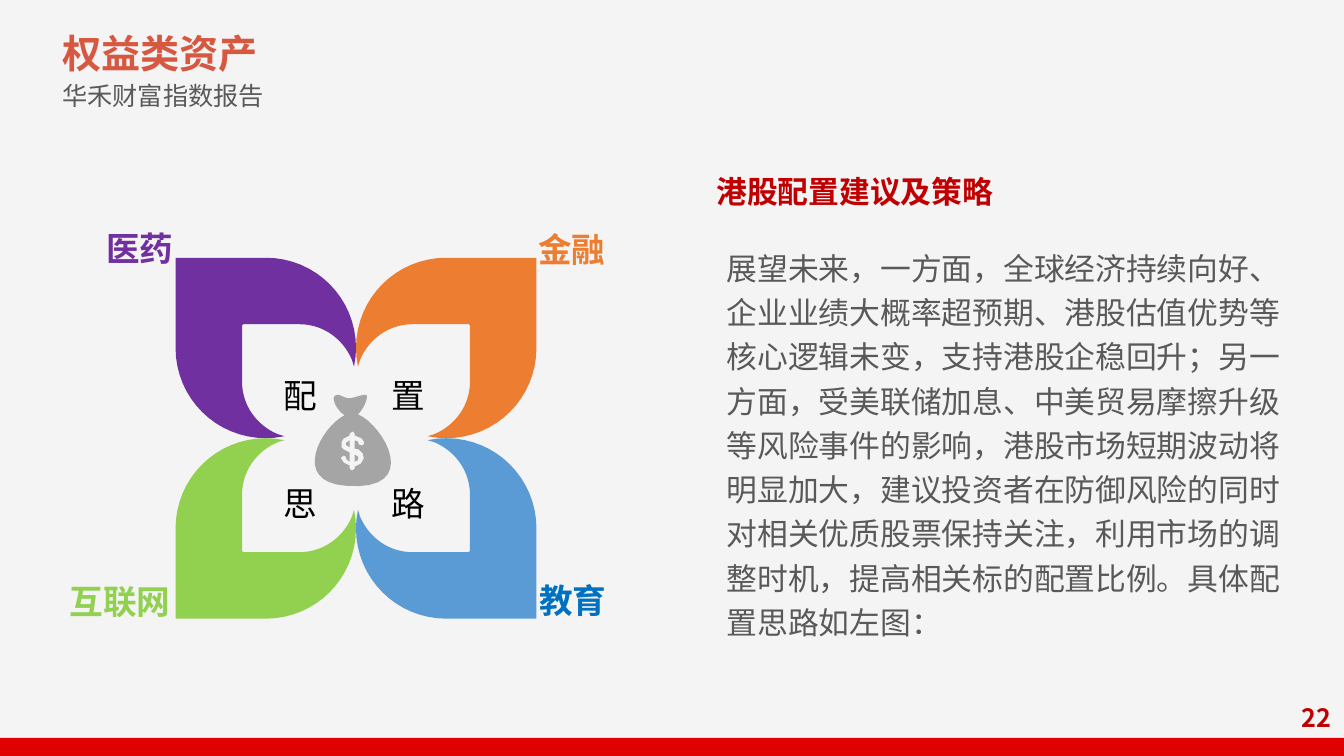
from lxml.etree import SubElement
from pptx import Presentation
from pptx.dml.color import RGBColor
from pptx.enum.shapes import MSO_SHAPE
from pptx.enum.text import MSO_ANCHOR, MSO_AUTO_SIZE, PP_ALIGN
from pptx.oxml.ns import qn
from pptx.util import Pt

FONT = "Noto Sans CJK SC"
PAPER = RGBColor(0xF4, 0xF4, 0xF4)
BAR = RGBColor(0xE1, 0x00, 0x00)
TITLE = RGBColor(0xD6, 0x58, 0x40)
GREY = RGBColor(0x59, 0x59, 0x59)
RED = RGBColor(0xC0, 0x00, 0x00)
PURPLE = RGBColor(0x70, 0x30, 0xA0)
ORANGE = RGBColor(0xED, 0x7D, 0x31)
GREEN = RGBColor(0x92, 0xD0, 0x50)
BLUE = RGBColor(0x5B, 0x9B, 0xD5)
DEEP_BLUE = RGBColor(0x00, 0x70, 0xC0)
BAG = RGBColor(0xA5, 0xA5, 0xA5)
BLACK = RGBColor(0x00, 0x00, 0x00)

CENTER_X, CENTER_Y = 254.3, 313
HALF_PETAL = [
    (128.9, 128.9), (64.4, 128.9),
    (64.4, 128.9, 28.8, 128.9, 0, 100.1, 0, 64.4),
    (0.3, 58.3), (1.4, 51.1), (2.9, 56),
    (2.9, 56, 9.4, 71.3, 23.8, 81.4, 40.3, 81.4), (80.6, 81.4),
]
BAG_BODY = [
    (255.6, 295.9, 260.6, 291.6, 263.5, 282.2, 261.4, 282.2),
    (261.4, 282.2, 259.2, 281.5, 252.7, 284.4, 249.8, 284.4),
    (249.8, 284.4, 246.2, 285.1, 241.9, 280.1, 239, 283),
    (239, 283, 236.9, 285.1, 240.5, 293, 246.2, 296.6),
    (246.2, 296.6, 229.7, 304.6, 207.4, 344.2, 247, 347),
    (247, 347, 301.7, 351.4, 274.3, 303.8, 255.6, 295.9),
]
DOLLAR = [
    (259.9, 327.6), (257.8, 331.2), (253.4, 333.4), (253.4, 334.8),
    (251.3, 336.2), (249.8, 334.8), (249.8, 332.6), (245.5, 330.5),
    (244.1, 328.3), (243.4, 326.9), (245.5, 325.4), (247, 326.2),
    (247.7, 328.3), (249.8, 329.8), (249.8, 323.3), (245.5, 321.1),
    (244.1, 319.7), (244.1, 315.4), (245.5, 313.2), (249.8, 311),
    (249.8, 309.6), (252, 308.2), (253.4, 309.6), (253.4, 311),
    (258.5, 313.2), (259.9, 315.4), (259.9, 317.5), (258.5, 318.2),
    (256.3, 317.5), (255.6, 315.4), (253.4, 314.6), (253.4, 320.4),
    (256.3, 321.1), (259.2, 324),
]
DOLLAR_UPPER = [(249.8, 314.6), (247.4, 316.1), (247.2, 317.9), (249.8, 319.5)]
DOLLAR_LOWER = [(253.4, 324.7), (256, 326.5), (255.6, 328.7), (253.4, 329.8)]

BODY = (
    "展望未来，一方面，全球经济持续向好、企业业绩大概率超预期、港股估值优势等核心逻辑未变，"
    "支持港股企稳回升；另一方面，受美联储加息、中美贸易摩擦升级等风险事件的影响，"
    "港股市场短期波动将明显加大，建议投资者在防御风险的同时对相关优质股票保持关注，"
    "利用市场的调整时机，提高相关标的配置比例。具体配置思路如左图："
)


def flatten(parts, steps=16):
    """Turn points and cubic curves into one list of points."""
    points = []
    for part in parts:
        if len(part) == 2:
            points.append(part)
            continue
        for i in range(steps + 1):
            t = i / steps
            weights = ((1 - t) ** 3, 3 * t * (1 - t) ** 2, 3 * t * t * (1 - t), t ** 3)
            points.append(tuple(sum(w * c for w, c in zip(weights, part[axis::2]))
                                for axis in (0, 1)))
    return points


class SlideBuilder:
    """Holds the font and the slide, and draws each kind of element."""

    def __init__(self, slide, font):
        self.slide = slide
        self.font = font

    def paint(self, sp, color):
        """Give a shape a plain fill."""
        sp.shadow.inherit = False
        sp.fill.solid()
        sp.fill.fore_color.rgb = color
        sp.line.fill.background()

    def bar(self, x, y, w, h, color):
        """Draw a filled rectangle."""
        sp = self.slide.shapes.add_shape(MSO_SHAPE.RECTANGLE, Pt(x), Pt(y), Pt(w), Pt(h))
        self.paint(sp, color)

    def outline(self, contours, color):
        """Draw a filled shape from closed contours."""
        fb = None
        for contour in contours:
            (x, y), *rest = [(Pt(px), Pt(py)) for px, py in contour]
            if fb is None:
                fb = self.slide.shapes.build_freeform(x, y)
            else:
                fb.move_to(x, y)
            fb.add_line_segments(rest, close=True)
        self.paint(fb.convert_to_shape(), color)

    def text(self, x, y, w, h, lines, align=PP_ALIGN.LEFT, anchor=MSO_ANCHOR.TOP,
             spacing=None, before=None, wrap=True, grow=False):
        """Write lines given as text, size, colour and bold."""
        tf = self.slide.shapes.add_textbox(Pt(x), Pt(y), Pt(w), Pt(h)).text_frame
        tf.word_wrap = wrap
        tf.vertical_anchor = anchor
        tf.auto_size = MSO_AUTO_SIZE.SHAPE_TO_FIT_TEXT if grow else MSO_AUTO_SIZE.NONE
        for i, (words, size, color, bold) in enumerate(lines):
            p = tf.add_paragraph() if i else tf.paragraphs[0]
            p.alignment = align
            p.line_spacing = spacing
            p.space_before = None if before is None else Pt(before)
            r = p.add_run()
            r.text = words
            r.font.name = self.font
            r.font.size = Pt(size)
            r.font.bold = bold
            r.font.color.rgb = color
            SubElement(r.font._element, qn("a:ea")).set("typeface", self.font)


def main():
    """Build the slide and save it."""
    prs = Presentation()
    prs.slide_width, prs.slide_height = Pt(960), Pt(540)
    s = prs.slides.add_slide(prs.slide_layouts[6])
    s.background.fill.solid()
    s.background.fill.fore_color.rgb = PAPER
    b = SlideBuilder(s, FONT)

    b.bar(0, 527, 960, 13, BAR)
    b.text(37.4, 13.7, 322, 70, [("权益类资产", 28, TITLE, True),
                                 ("华禾财富指数报告", 18, GREY, False)],
           spacing=1.12, grow=True)
    b.text(511.9, 169.2, 411.8, 359.3, [(BODY, 22, GREY, False)],
           spacing=1.2, before=6, grow=True)
    b.text(504.7, 119.5, 376.6, 33.8, [("港股配置建议及策略", 22, RED, True)],
           align=PP_ALIGN.JUSTIFY, grow=True)
    b.text(915.8, 498.2, 42.5, 28.8, [("22", 18, RED, True)],
           align=PP_ALIGN.RIGHT, anchor=MSO_ANCHOR.MIDDLE)

    half = flatten(HALF_PETAL)
    petal = half + [(v, u) for u, v in reversed(half)]
    for dx, dy, color in ((-1, -1, PURPLE), (1, -1, ORANGE), (-1, 1, GREEN), (1, 1, BLUE)):
        b.outline([[(CENTER_X + dx * u, CENTER_Y + dy * v) for u, v in petal]], color)
    b.outline([flatten(BAG_BODY), DOLLAR, DOLLAR_UPPER, DOLLAR_LOWER], BAG)

    for words, x, y, w, align, color in (
        ("教育", 378, 395.3, 92.9, PP_ALIGN.LEFT, DEEP_BLUE),
        ("金融", 377.3, 144.7, 145.4, PP_ALIGN.LEFT, ORANGE),
        ("互联网", 13.7, 396, 115.2, PP_ALIGN.RIGHT, GREEN),
        ("医药", 37.4, 144, 93.6, PP_ALIGN.RIGHT, PURPLE),
    ):
        b.text(x, y, w, 51.1, [(words, 24, color, True)], align, MSO_ANCHOR.BOTTOM)

    for i, word in enumerate("配置思路"):
        row, col = divmod(i, 2)
        b.text(195.8 + 76.7 * col, 264.6 + 77 * row, 38.2, 36,
               [(word, 24, BLACK, False)], wrap=False, grow=True)

    prs.save("out.pptx")


if __name__ == "__main__":
    main()
